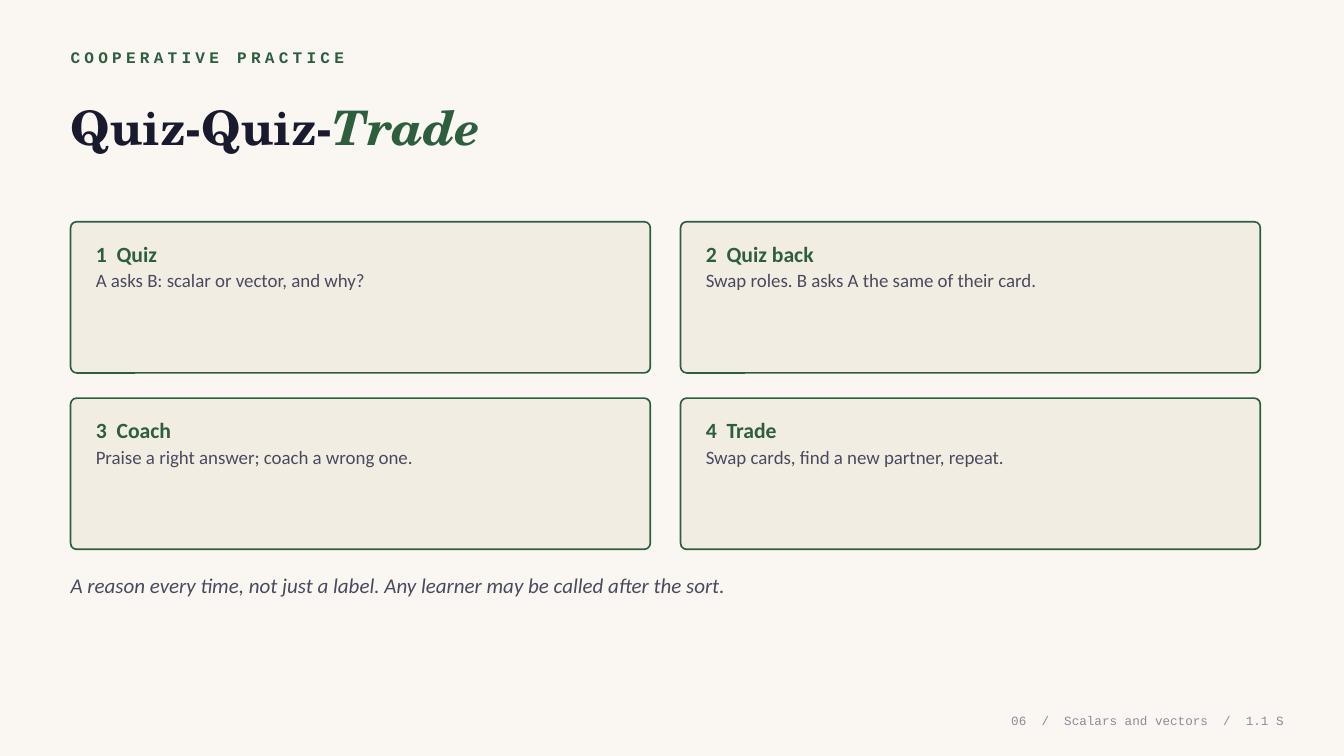
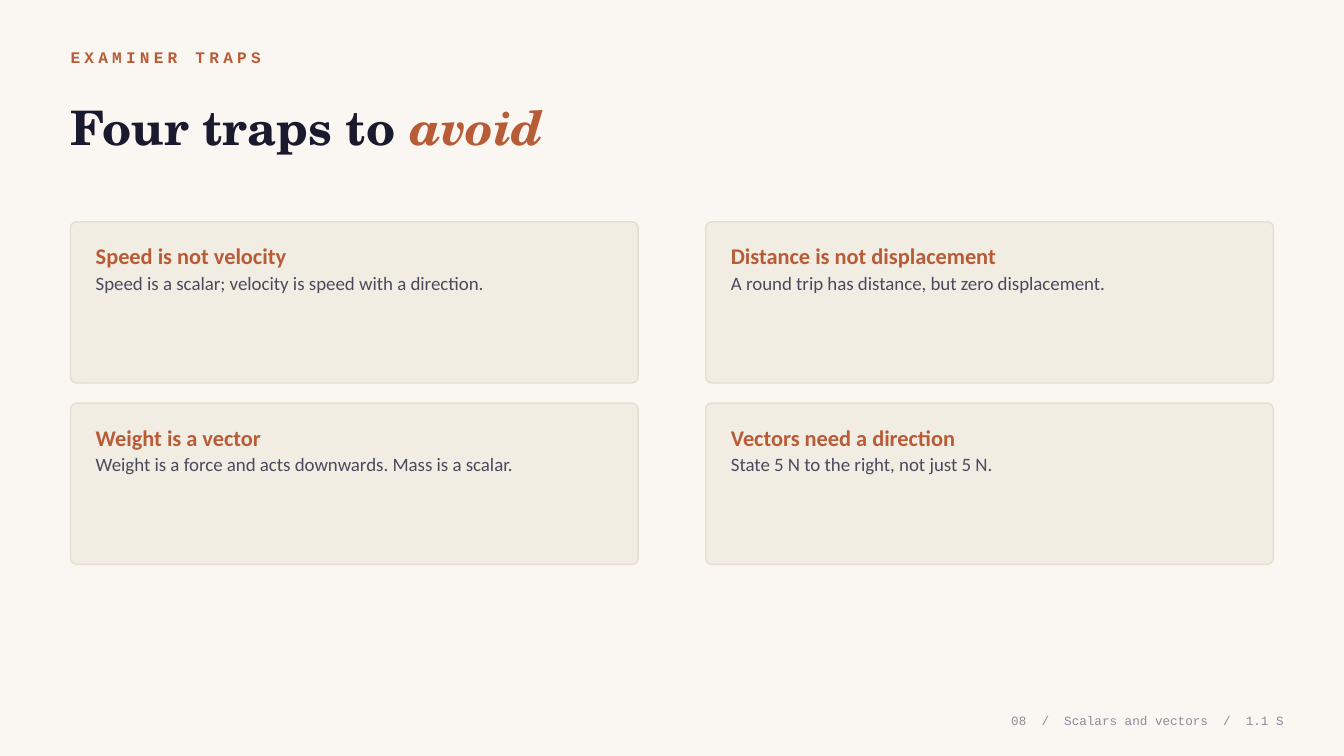
"""Build the two card slides of a lesson on scalars and vectors."""
from dataclasses import dataclass
from typing import Any, NamedTuple

from pptx import Presentation
from pptx import util as u
from pptx.dml.color import RGBColor
from pptx.enum import shapes, text

EMU_PER_PX = 9144
SLIDE_WIDTH, SLIDE_HEIGHT = 1333, 750
MARGIN, CONTENT_WIDTH = 70, 1193
CARD_TOP, CARD_PADDING, CARD_RADIUS = 220, 25, 6

PAPER, CARD_FILL, CARD_BORDER = "FAF7F2", "F2EDE3", "E5DDD0"
INK, BODY, MUTED = "1A1A2E", "4A4A5E", "8B8B9C"
GREEN, RUST = "2D5F3F", "B85C38"
SERIF, SANS, MONO = "TeX Gyre Schola", "Calibri", "Courier New"


class Frame(NamedTuple):
    left: int
    top: int
    width: int
    height: int


class Card(NamedTuple):
    heading: str
    body: str


@dataclass(frozen=True)
class CardGrid:
    width: int
    height: int
    column_gap: int
    row_gap: int
    text_offset: int
    border: str
    border_width: float
    heading_size: float


@dataclass(frozen=True)
class Lesson:
    number: str
    label: str
    title: str
    emphasis: str
    accent: str
    grid: CardGrid
    cards: tuple[Card, ...]
    note: str = ""


LESSONS = (
    Lesson(
        "06", "COOPERATIVE PRACTICE", "Quiz-Quiz-", "Trade", GREEN,
        CardGrid(575, 150, 30, 25, 16, GREEN, 1.2, 15.5),
        (
            Card("1  Quiz", "A asks B: scalar or vector, and why?"),
            Card("2  Quiz back", "Swap roles. B asks A the same of their card."),
            Card("3  Coach", "Praise a right answer; coach a wrong one."),
            Card("4  Trade", "Swap cards, find a new partner, repeat."),
        ),
        "A reason every time, not just a label. Any learner may be called after the sort.",
    ),
    Lesson(
        "08", "EXAMINER TRAPS", "Four traps to ", "avoid", RUST,
        CardGrid(563, 160, 67, 20, 18, CARD_BORDER, 1, 16),
        (
            Card("Speed is not velocity", "Speed is a scalar; velocity is speed with a direction."),
            Card("Distance is not displacement", "A round trip has distance, but zero displacement."),
            Card("Weight is a vector", "Weight is a force and acts downwards. Mass is a scalar."),
            Card("Vectors need a direction", "State 5 N to the right, not just 5 N."),
        ),
    ),
)


def px(length: int) -> u.Emu:
    return u.Emu(length * EMU_PER_PX)


def place(frame: Frame) -> tuple[u.Emu, ...]:
    return tuple(px(length) for length in frame)


def rgb(color: str) -> RGBColor:
    return RGBColor.from_string(color)


def add_run(paragraph: Any, words: str, *, size: float, color: str, font: str = SANS,
            bold: bool = False, italic: bool = False, tracking: float = 0) -> None:
    run = paragraph.add_run()
    run.text = words
    run.font.name = font
    run.font.size = u.Pt(size)
    run.font.color.rgb = rgb(color)
    run.font.bold = bold
    run.font.italic = italic
    if tracking:
        run._r.get_or_add_rPr().set("spc", str(round(tracking * 100)))


def add_text_frame(slide: Any, frame: Frame, anchor: Any = text.MSO_ANCHOR.MIDDLE) -> Any:
    text_frame = slide.shapes.add_textbox(*place(frame)).text_frame
    text_frame.word_wrap = True
    text_frame.vertical_anchor = anchor
    text_frame.margin_left = text_frame.margin_right = 0
    text_frame.margin_top = text_frame.margin_bottom = 0
    return text_frame


def add_header(slide: Any, lesson: Lesson) -> None:
    label = add_text_frame(slide, Frame(MARGIN, 42, CONTENT_WIDTH, 30)).paragraphs[0]
    add_run(label, lesson.label, size=11.5, color=lesson.accent, font=MONO, bold=True, tracking=3)
    title = add_text_frame(slide, Frame(MARGIN, 78, CONTENT_WIDTH, 95)).paragraphs[0]
    add_run(title, lesson.title, size=34, color=INK, font=SERIF, bold=True)
    add_run(title, lesson.emphasis, size=34, color=lesson.accent, font=SERIF, bold=True, italic=True)


def add_card(slide: Any, frame: Frame, card: Card, grid: CardGrid, accent: str) -> None:
    panel = slide.shapes.add_shape(shapes.MSO_SHAPE.ROUNDED_RECTANGLE, *place(frame))
    panel.shadow.inherit = False
    panel.adjustments[0] = CARD_RADIUS / frame.height
    panel.fill.solid()
    panel.fill.fore_color.rgb = rgb(CARD_FILL)
    panel.line.color.rgb = rgb(grid.border)
    panel.line.width = u.Pt(grid.border_width)

    inner = Frame(frame.left + CARD_PADDING, frame.top + grid.text_offset,
                  frame.width - 2 * CARD_PADDING, frame.height - 2 * grid.text_offset)
    text_frame = add_text_frame(slide, inner, text.MSO_ANCHOR.TOP)
    heading, body = text_frame.paragraphs[0], text_frame.add_paragraph()
    heading.line_spacing = body.line_spacing = 1.1
    add_run(heading, card.heading, size=grid.heading_size, color=accent, bold=True)
    add_run(body, card.body, size=13.5, color=BODY)


def add_cards(slide: Any, lesson: Lesson) -> None:
    grid = lesson.grid
    for index, card in enumerate(lesson.cards):
        row, column = divmod(index, 2)
        frame = Frame(MARGIN + column * (grid.width + grid.column_gap),
                      CARD_TOP + row * (grid.height + grid.row_gap), grid.width, grid.height)
        add_card(slide, frame, card, grid, lesson.accent)


def add_footer(slide: Any, number: str) -> None:
    footer = add_text_frame(slide, Frame(893, 700, 380, 30)).paragraphs[0]
    footer.alignment = text.PP_ALIGN.RIGHT
    add_run(footer, f"{number}  /  Scalars and vectors  /  1.1 S", size=9, color=MUTED, font=MONO)


def add_lesson(presentation: Any, lesson: Lesson) -> None:
    slide = presentation.slides.add_slide(presentation.slide_layouts[6])
    add_header(slide, lesson)
    add_cards(slide, lesson)
    if lesson.note:
        note = add_text_frame(slide, Frame(MARGIN, 555, CONTENT_WIDTH, 50)).paragraphs[0]
        add_run(note, lesson.note, size=15, color=BODY, italic=True)
    add_footer(slide, lesson.number)


def main() -> None:
    presentation = Presentation()
    presentation.slide_width, presentation.slide_height = px(SLIDE_WIDTH), px(SLIDE_HEIGHT)
    background = presentation.slide_master.background.fill
    background.solid()
    background.fore_color.rgb = rgb(PAPER)
    for lesson in LESSONS:
        add_lesson(presentation, lesson)
    presentation.save("out.pptx")


if __name__ == "__main__":
    main()
